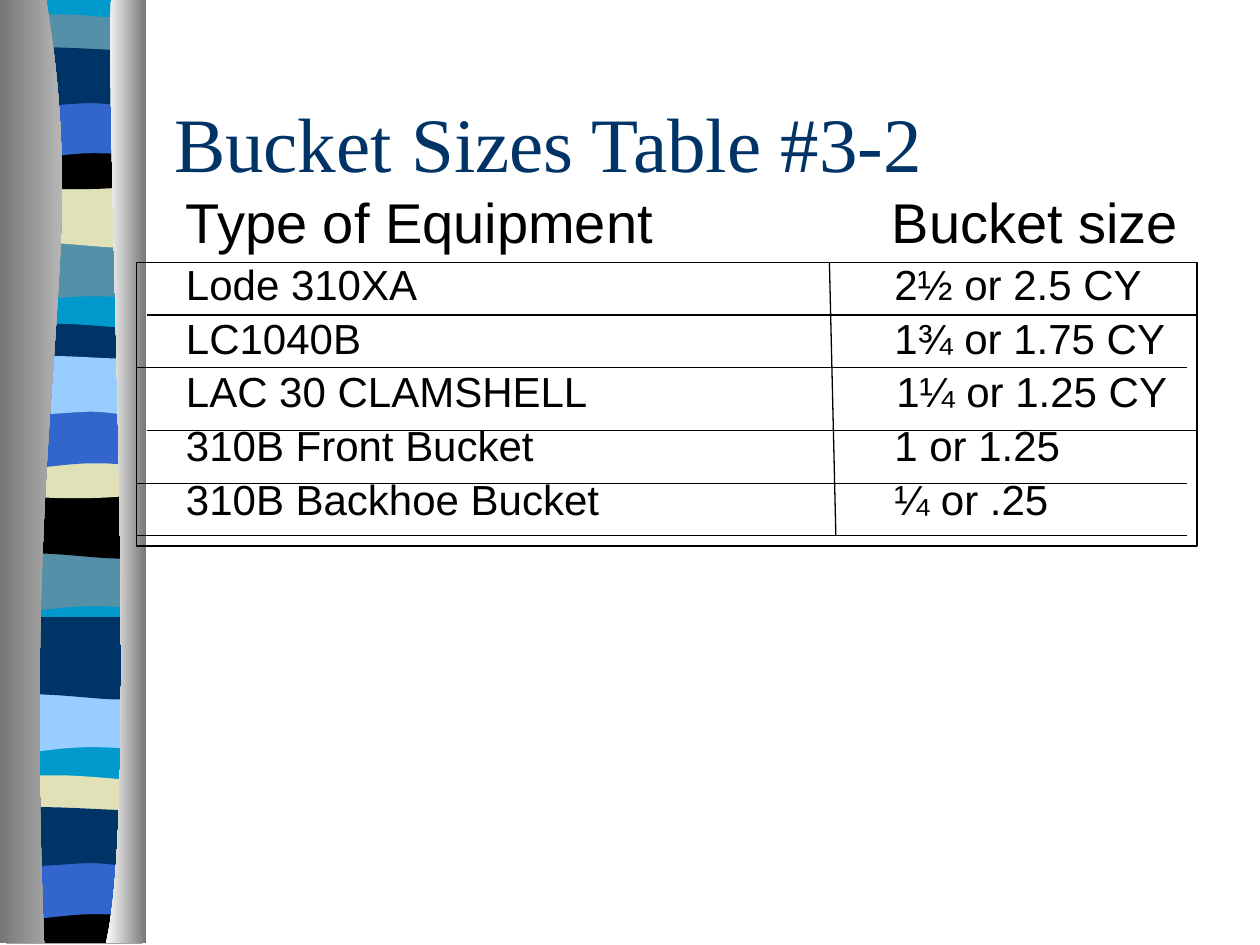
from pptx import Presentation
from pptx.dml.color import RGBColor
from pptx.enum.shapes import MSO_CONNECTOR, MSO_SHAPE
from pptx.enum.text import MSO_ANCHOR
from pptx.oxml.ns import qn
from pptx.util import Cm, Pt
from lxml.etree import SubElement

COLORS = {
    "navy": "003366", "blue": "3366CC", "sky": "99CCFF", "cyan": "0099CC",
    "teal": "5490A8", "sand": "E1E1B7", "black": "000000",
    "dark": "767676", "light": "D5D5D5", "white": "FFFFFF",
}


def add_outline(steps):
    """Steps in cm: (x, y) is a corner, six numbers are a Bezier curve."""
    points = [(Cm(step[i]), Cm(step[i + 1])) for step in steps for i in range(0, len(step), 2)]
    builder = page.shapes.build_freeform(*points[0])
    builder.add_line_segments(points[1:], close=True)
    shape = builder.convert_to_shape()
    # Turn the three segments of each curve into one Bezier segment
    segments = iter(list(shape._element.iter(qn("a:lnTo"))))
    for step in steps[1:]:
        first = next(segments)
        if len(step) == 6:
            curve = first.makeelement(qn("a:cubicBezTo"))
            first.addprevious(curve)
            for segment in (first, next(segments), next(segments)):
                curve.append(segment[0])
                segment.getparent().remove(segment)
    shape.shadow.inherit = False
    shape.line.fill.background()
    return shape


def write(para, text, font="Arial", size=24, color="black", spacing=None, before=0):
    para.line_spacing = spacing
    para.space_before = Pt(before)
    span = para.add_run()
    span.text = text
    span.font.name = font
    span.font.size = Pt(size)
    span.font.color.rgb = RGBColor.from_string(COLORS[color])


deck = Presentation()
deck.slide_width, deck.slide_height = Cm(25.4), Cm(19.05)
page = deck.slides.add_slide(deck.slide_layouts[6])

# Ribbon of wavy bands, each wave drawn from its own top
LEFT, RIGHT = 0.13, 2.87
WAVES = {
    "flat": [(RIGHT, 0), (RIGHT, 19.02), (LEFT, 19.02), (LEFT, 0)],
    "dip": [(RIGHT, 0), (RIGHT, 1.33), (0.99, 1.13, 0.61, 1.54, LEFT, 1.33), (LEFT, 0)],
    "sag": [(RIGHT, -0.23), (RIGHT, 1.37), (2.44, 1.57, 0.99, 1.21, LEFT, 1.37),
            (LEFT, -0.23)],
    "crest": [(RIGHT, 0), (RIGHT, 0.88), (2.44, 0.98, 0.61, 0.98, LEFT, 0.88),
              (LEFT, 0), (0.33, -0.14, 0.74, -0.12, 1.19, -0.12),
              (1.65, -0.12, 2.54, -0.03, RIGHT, 0)],
    "bowl": [(RIGHT, 0), (RIGHT, 0.97), (2.44, 1.11, 0.61, 1.11, LEFT, 0.97),
             (LEFT, 0), (1.83, 0.13, 2.31, 0, RIGHT, 0)],
    "foot": [(RIGHT, 0), (RIGHT, 0.94), (LEFT, 0.94),
             (LEFT, 0), (1.83, 0.13, 2.31, 0, RIGHT, 0)],
    "arch": [(RIGHT, 0), (RIGHT, 1.35), (2.46, 1.21, 2.29, 1.21, 1.83, 1.21),
             (1.37, 1.21, 0.56, 1.35, LEFT, 1.35), (LEFT, 0)],
    "swell": [(RIGHT, -0.03), (RIGHT, 1.04), (2.72, 1.18, 2.29, 1.04, 1.83, 1.04),
              (1.37, 1.04, 0.43, 1.18, LEFT, 1.04), (LEFT, -0.03),
              (0.53, -0.16, 2.01, -0.03, 2.46, -0.03), (RIGHT, -0.03)],
}
BANDS = [
    ("flat", 0, "cyan"),
    ("dip", 4.7, "teal"), ("sag", 3.56, "sand"), ("crest", 0.41, "teal"),
    ("bowl", 2.74, "black"), ("arch", 1.88, "blue"), ("swell", 1.04, "navy"),
    ("dip", 10.95, "teal"), ("sag", 9.83, "black"), ("crest", 6.65, "navy"),
    ("bowl", 8.97, "sand"), ("arch", 8.13, "blue"), ("swell", 7.26, "sky"),
    ("dip", 13.79, "sky"), ("sag", 12.67, "navy"), ("crest", 15.75, "sand"),
    ("foot", 18.08, "black"), ("arch", 17.22, "blue"), ("swell", 16.36, "navy"),
]
for wave, top, color in BANDS:
    # Every second number of a step is a height
    steps = [tuple(n + top * (i % 2) for i, n in enumerate(step)) for step in WAVES[wave]]
    band = add_outline(steps)
    band.fill.solid()
    band.fill.fore_color.rgb = RGBColor.from_string(COLORS[color])

# Shaded edges on both sides of the ribbon
EDGES = [
    ([(0.93, 0), (1.85, 5.49, 0.43, 7.52, 0.89, 19.02), (0, 19.02), (0, 0)],
     ("dark", "light")),
    ([(2.24, 0), (2.13, 3.18, 2.82, 16.41, 2.13, 19.02), (2.95, 19.02), (2.95, 0)],
     ("white", "dark")),
]
for steps, shades in EDGES:
    edge = add_outline(steps)
    edge.fill.gradient()
    edge.fill.gradient_angle = 0
    for stop, shade in zip(edge.fill.gradient_stops, shades):
        stop.color.rgb = RGBColor.from_string(COLORS[shade])

# Title
title = page.shapes.add_textbox(Cm(3.26), Cm(1.27), Cm(21.59), Cm(3.18)).text_frame
title.word_wrap = True
title.vertical_anchor = MSO_ANCHOR.MIDDLE
write(title.paragraphs[0], "Bucket Sizes Table #3-2",
      font="Times New Roman", size=44, color="navy")

# Equipment list, second column on a tab stop
ROWS = [
    ("Type of Equipment", "Bucket size", 14.23),
    ("Lode 310XA", "2½ or 2.5 CY", 14.28),
    ("LC1040B", "1¾ or 1.75 CY", 14.28),
    ("LAC 30 CLAMSHELL", "1¼ or 1.25 CY", 14.32),
    ("310B Front Bucket", "1 or 1.25", 14.28),
    ("310B Backhoe Bucket", "¼ or .25", 14.28),
]
body = page.shapes.add_textbox(Cm(2.54), Cm(3.81), Cm(21.79), Cm(13.54)).text_frame
body.word_wrap = True
body.margin_left = Cm(1.21)
for number, (equipment, bucket, stop) in enumerate(ROWS):
    para = body.add_paragraph() if number else body.paragraphs[0]
    size = 24 if number else 32
    write(para, f"{equipment}\t{bucket}", size=size, spacing=0.9, before=size * 0.2)
    tabs = SubElement(para._p.get_or_add_pPr(), qn("a:tabLst"))
    SubElement(tabs, qn("a:tab"), pos=str(Cm(stop)), algn="l")

# Frame and rules
frame = page.shapes.add_shape(MSO_SHAPE.RECTANGLE, Cm(2.75), Cm(5.29), Cm(21.38), Cm(5.72))
frame.shadow.inherit = False
frame.fill.background()
RULES = [(16.72, 5.29, 16.85, 10.8)]
for y in (6.35, 8.68):
    RULES.append((2.96, y, 24.13, y))
for y in (7.41, 9.74, 10.8):
    RULES.append((2.75, y, 23.92, y))
strokes = [frame]
for ends in RULES:
    rule = page.shapes.add_connector(MSO_CONNECTOR.STRAIGHT, *map(Cm, ends))
    SubElement(rule._element.spPr, qn("a:effectLst"))
    strokes.append(rule)
for stroke in strokes:
    stroke.line.color.rgb = RGBColor.from_string(COLORS["black"])
    stroke.line.width = Pt(0.75)

deck.save("out.pptx")
